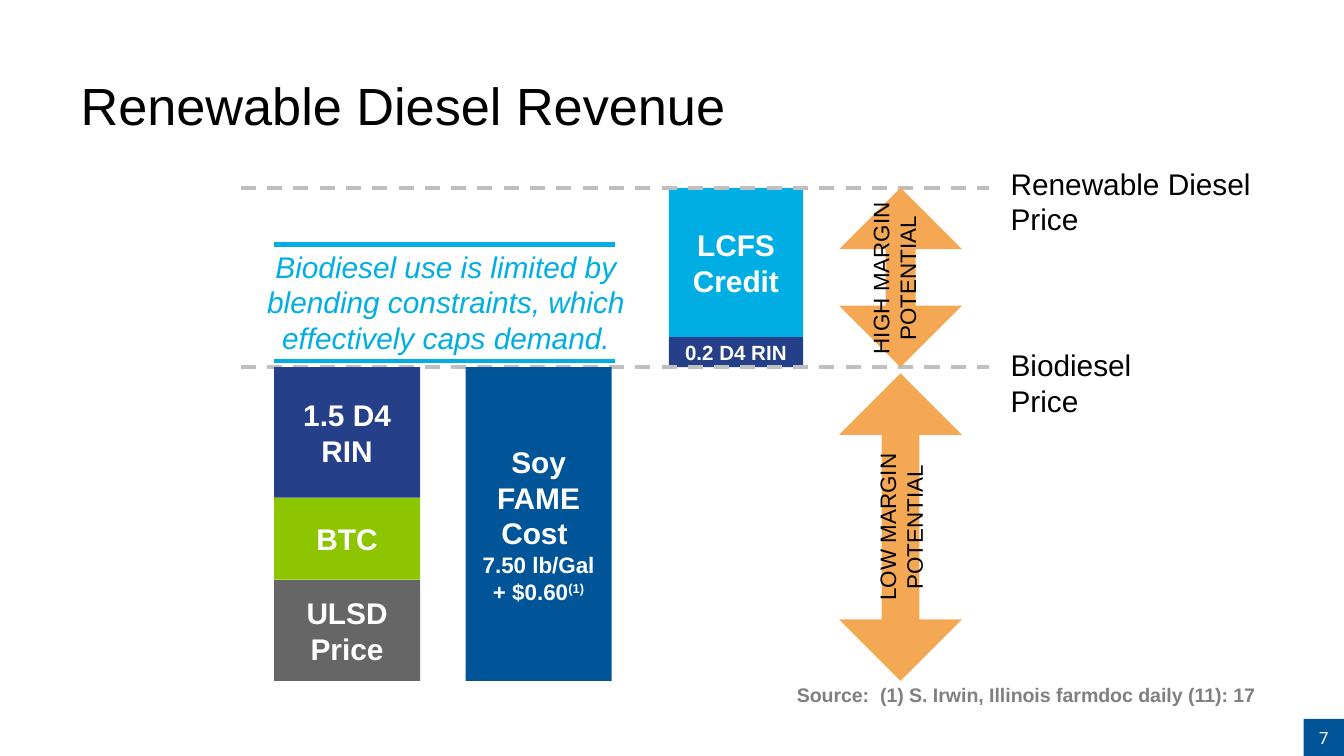
from lxml import etree
from pptx import Presentation
from pptx.dml.color import RGBColor
from pptx.enum.dml import MSO_LINE
from pptx.enum.shapes import MSO_CONNECTOR, MSO_SHAPE
from pptx.enum.text import MSO_ANCHOR, MSO_AUTO_SIZE, PP_ALIGN
from pptx.oxml.ns import qn
from pptx.util import Cm, Pt

RECT, ARROW = MSO_SHAPE.RECTANGLE, MSO_SHAPE.UP_DOWN_ARROW
LEFT, CENTER = PP_ALIGN.LEFT, PP_ALIGN.CENTER
TOP, MIDDLE = MSO_ANCHOR.TOP, MSO_ANCHOR.MIDDLE

COLORS = {
    "black": "000000", "white": "FFFFFF", "blue": "005599", "navy": "254089",
    "cyan": "00AEE4", "green": "8DC600", "gray": "666666", "orange": "F5A853",
    "dash": "BFBFBF", "source": "808080",
}

# Content
TITLE = "Renewable Diesel Revenue"
CAPTION = ("Biodiesel use is limited by blending constraints, "
           "which effectively caps demand.")
SOURCE = "Source:  (1) S. Irwin, Illinois farmdoc daily (11): 17"
PAGE = "7"
SOY_COST = [("Soy FAME Cost \n", {}),
            ("7.50 lb/Gal + $0.60", {"size": 12}),
            ("(1)", {"size": 12, "superscript": True})]

# Vertical levels of the diagram, in cm
RENEWABLE_Y, BIODIESEL_Y, BASE_Y = 3.55, 6.94, 12.87

# Each column: left, width, bottom, blocks from the bottom up
# Each block: text, height, colour, text size
COLUMNS = [
    (12.64, 2.54, BIODIESEL_Y, [("0.2 D4 RIN", 0.57, "navy", 11),
                                ("LCFS Credit", 2.82, "cyan", 16)]),
    (5.18, 2.76, BASE_Y, [("ULSD Price", 1.91, "gray", 16),
                          ("BTC", 1.55, "green", 16),
                          ("1.5 D4 RIN", 2.47, "navy", 16)]),
    (8.8, 2.76, BASE_Y, [(SOY_COST, BASE_Y - BIODIESEL_Y, "blue", 16)]),
]
# Price label: text, left, top, width, height
PRICE_LABELS = [("Biodiesel Price", 18.85, 6.43, 3.89, 0.94),
                ("Renewable Diesel Price", 18.85, 3.0, 5.87, 0.94)]
# Margin arrow: top, bottom, head proportion, text
MARGIN_ARROWS = [(7.06, BASE_Y, 0.309, "LOW MARGIN\nPOTENTIAL"),
                 (RENEWABLE_Y, BIODIESEL_Y, 0.244, "")]


def rgb(name):
    return RGBColor.from_string(COLORS[name])


def write(s, text, size=16, color="black", font="Arial", bold=False,
          italic=False, align=LEFT, anchor=TOP, spacing=None, vertical=False,
          inset=None):
    """Fill a shape with text: a string, or a list of (text, overrides) runs."""
    tf = s.text_frame
    tf.word_wrap = True
    tf.auto_size = MSO_AUTO_SIZE.NONE
    tf.vertical_anchor = anchor
    if inset is not None:
        tf.margin_left = tf.margin_right = Cm(inset)
        tf.margin_top = tf.margin_bottom = Cm(inset)
    if vertical:
        tf._txBody.bodyPr.set("vert", "vert270")
    p = tf.paragraphs[0]
    p.alignment = align
    if spacing:
        p.line_spacing = spacing
    for content, extra in [(text, {})] if isinstance(text, str) else text:
        for i, part in enumerate(content.split("\n")):
            if i:
                p.add_line_break()
            if not part:
                continue
            r = p.add_run()
            r.text = part
            r.font.name = font
            r.font.size = Pt(extra.get("size", size))
            r.font.bold, r.font.italic = bold, italic
            r.font.color.rgb = rgb(color)
            if extra.get("superscript"):
                r.font._element.set("baseline", "30000")


def add_shape(kind, x, y, w, h, fill):
    s = slide.shapes.add_shape(kind, Cm(x), Cm(y), Cm(w), Cm(h))
    s.shadow.inherit = False
    s.fill.solid()
    s.fill.fore_color.rgb = rgb(fill)
    s.line.fill.background()
    return s


def add_text(text, x, y, w, h, **fmt):
    s = slide.shapes.add_textbox(Cm(x), Cm(y), Cm(w), Cm(h))
    write(s, text, **fmt)


def add_rule(x1, x2, y, color, width, dash=None):
    s = slide.shapes.add_connector(MSO_CONNECTOR.STRAIGHT,
                                   Cm(x1), Cm(y), Cm(x2), Cm(y))
    s.line.color.rgb = rgb(color)
    s.line.width = Pt(width)
    if dash:
        s.line.dash_style = dash
    etree.SubElement(s._element.spPr, qn("a:effectLst"))


def add_column(x, w, bottom, blocks):
    for text, h, color, size in blocks:
        bottom -= h
        s = add_shape(RECT, x, bottom, w, h, color)
        write(s, text, size=size, color="white", bold=True,
              align=CENTER, anchor=MIDDLE)


prs = Presentation()
prs.slide_width, prs.slide_height = Cm(25.4), Cm(14.29)
slide = prs.slides.add_slide(prs.slide_layouts[5])

title = slide.shapes.title
title.left, title.top, title.width, title.height = Cm(1.27), Cm(0.79), Cm(22.86), Cm(2.39)
write(title, TITLE, size=28, anchor=MIDDLE)

page = add_shape(RECT, 24.64, 13.59, 0.76, 0.7, "blue")
write(page, PAGE, size=9, color="white", font="Roboto", align=CENTER,
      anchor=MIDDLE, inset=0)
add_text(SOURCE, 14.81, 12.9, 9.53, 0.43, size=10.5, color="source",
         bold=True, spacing=0.7)
add_text(CAPTION, 4.29, 4.57, 8.28, 2.31, color="cyan", italic=True, align=CENTER)

# The price lines cross the credit column but pass behind the cost columns
credit_column, *cost_columns = COLUMNS
add_column(*credit_column)
for y in (BIODIESEL_Y, RENEWABLE_Y):
    add_rule(4.55, 18.69, y, "dash", 2, MSO_LINE.DASH)
for column in cost_columns:
    add_column(*column)

for label, *box in PRICE_LABELS:
    add_text(label, *box)

for top, bottom, head, text in MARGIN_ARROWS:
    s = add_shape(ARROW, 15.86, top, 2.32, bottom - top, "orange")
    s.adjustments[0], s.adjustments[1] = 0.5, head
    if text:
        write(s, text, size=12, align=CENTER, anchor=MIDDLE, vertical=True)
add_text("HIGH MARGIN POTENTIAL", 16.26, 3.43, 1.55, 3.66, size=12,
         align=CENTER, vertical=True)

for y in (4.62, 6.83):
    add_rule(5.18, 11.62, y, "cyan", 2.25)

prs.save("out.pptx")
